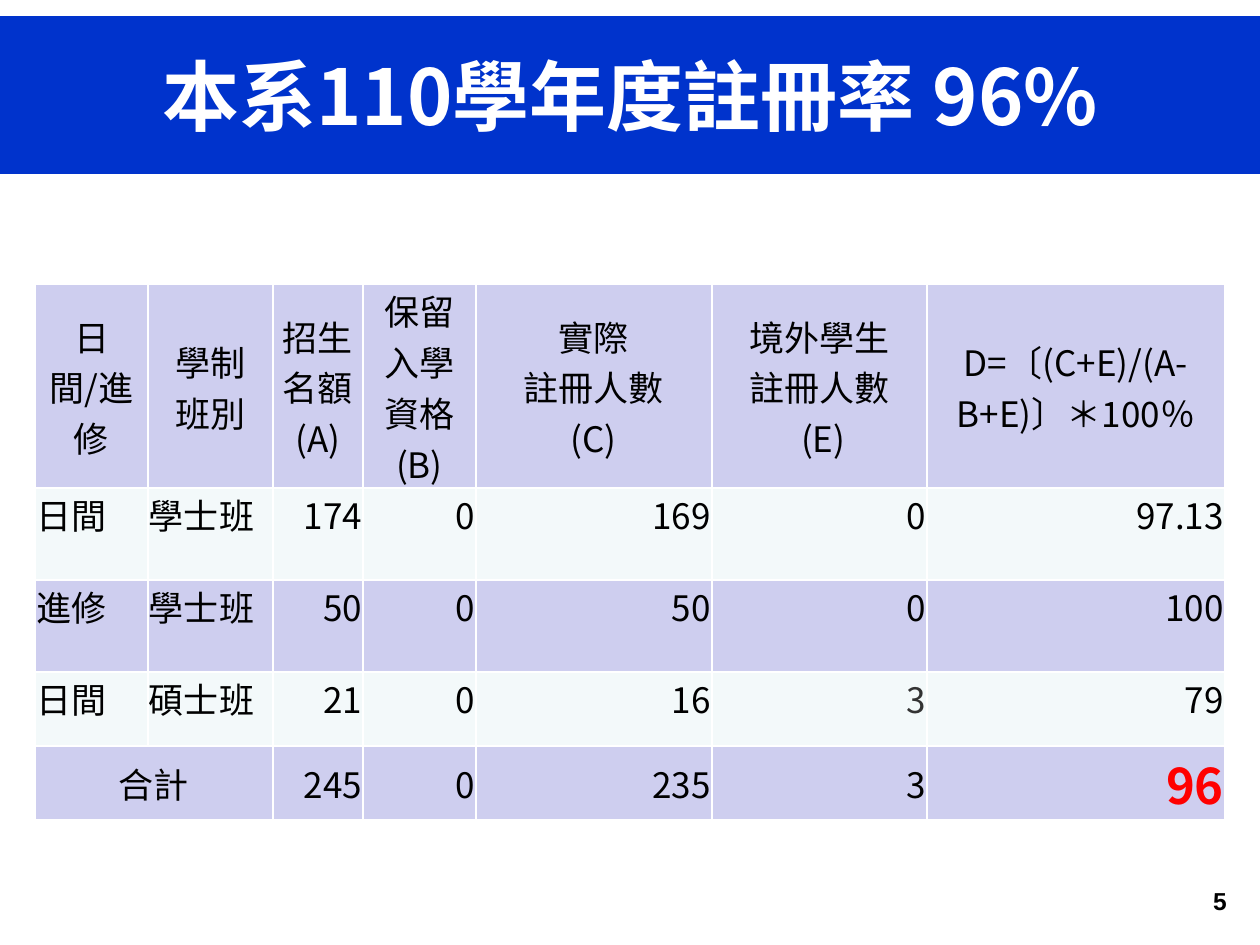
from pptx import Presentation
from pptx.dml.color import RGBColor
from pptx.enum.shapes import MSO_SHAPE as Shape
from pptx.enum.text import MSO_ANCHOR as Anchor, PP_ALIGN as Align
from pptx.oxml.ns import qn
from pptx.util import Emu, Pt
from lxml.etree import SubElement

SCALE = 914400 / 126
COLORS = {
    "blue": "0033CC",
    "white": "FFFFFF",
    "black": "000000",
    "gray": "333333",
    "red": "FF0000",
    "lavender": "CECEEF",
    "mint": "F3F9FA",
}
CJK_FONT = "Noto Sans CJK SC"

COLUMN_WIDTHS = [113, 125, 90, 113, 236, 215, 298]
ROW_HEIGHTS = [204, 92, 92, 74, 74]
ROWS = [
    ["日間/進修", "學制\n班別", "招生名額(A)", "保留\n入學\n資格\n(B)",
     "實際\n註冊人數\n(C)", "境外學生\n註冊人數\n (E)", "D=〔(C+E)/(A-B+E)〕＊100％"],
    ["日間", "學士班", "174", "0", "169", "0", "97.13"],
    ["進修", "學士班", "50", "0", "50", "0", "100"],
    ["日間", "碩士班", "21", "0", "16", "3", "79"],
    ["合計", "", "245", "0", "235", "3", "96"],
]
SPECIAL_STYLES = {
    (3, 5): {"color": "gray"},
    (4, 6): {"size": 28, "color": "red", "bold": True},
}


def px(value):
    return Emu(round(value * SCALE))


def rgb(name):
    return RGBColor.from_string(COLORS[name])


class SlideBuilder:
    def __init__(self, page):
        self.page = page

    def style(self, frame, align, size=20, color="black", bold=False, font=CJK_FONT):
        for para in frame.paragraphs:
            para.alignment = align
            for span in para.runs:
                span.font.size = Pt(size)
                span.font.bold = bold
                span.font.name = font
                span.font.color.rgb = rgb(color)
                SubElement(span.font._element, qn("a:ea"), typeface=font)

    def banner(self, text, left, top, width, height):
        box = self.page.shapes.add_shape(
            Shape.RECTANGLE, px(left), px(top), px(width), px(height))
        box.shadow.inherit = False
        box.fill.solid()
        box.fill.fore_color.rgb = rgb("blue")
        box.line.fill.background()
        box.text_frame.text = text
        box.text_frame.vertical_anchor = Anchor.MIDDLE
        self.style(box.text_frame, Align.CENTER, 44, "white", True)

    def page_number(self, text, left, top, width, height):
        box = self.page.shapes.add_textbox(px(left), px(top), px(width), px(height))
        box.text_frame.word_wrap = True
        box.text_frame.text = text
        self.style(box.text_frame, Align.RIGHT, 14, bold=True, font="Arial")

    def borders(self, cell):
        properties = cell._tc.get_or_add_tcPr()
        for index, side in enumerate(("lnL", "lnR", "lnT", "lnB")):
            line = properties.makeelement(qn(f"a:{side}"), {"w": str(Pt(1))})
            fill = SubElement(line, qn("a:solidFill"))
            SubElement(fill, qn("a:srgbClr"), val=COLORS["white"])
            properties.insert(index, line)

    def cell(self, cell, text, fill, align, anchor, **style):
        cell.fill.solid()
        cell.fill.fore_color.rgb = rgb(fill)
        cell.margin_left = cell.margin_right = cell.margin_top = px(1)
        cell.margin_bottom = 0
        cell.vertical_anchor = anchor
        self.borders(cell)
        if text:
            cell.text_frame.text = text
            self.style(cell.text_frame, align, **style)

    def table(self, rows, left, top, widths, heights):
        grid = self.page.shapes.add_table(
            len(rows), len(widths), px(left), px(top),
            px(sum(widths)), px(sum(heights))).table
        grid.first_row = grid.horz_banding = False
        for column, width in zip(grid.columns, widths):
            column.width = px(width)
        for row, height in zip(grid.rows, heights):
            row.height = px(height)
        last = len(rows) - 1
        grid.cell(last, 0).merge(grid.cell(last, 1))
        for r, texts in enumerate(rows):
            fill = "mint" if r % 2 else "lavender"
            anchor = Anchor.MIDDLE if r in (0, last) else Anchor.TOP
            for c, text in enumerate(texts):
                if r == 0 or (r == last and c == 0):
                    align = Align.CENTER
                else:
                    align = Align.LEFT if c < 2 else Align.RIGHT
                self.cell(grid.cell(r, c), text, fill, align, anchor,
                          **SPECIAL_STYLES.get((r, c), {}))


def main():
    deck = Presentation()
    deck.slide_width, deck.slide_height = px(1260), px(945)
    builder = SlideBuilder(deck.slides.add_slide(deck.slide_layouts[6]))
    builder.banner("本系110學年度註冊率 96%", 0, 16, 1260, 158)
    builder.page_number("5", 945, 880, 294, 65)
    builder.table(ROWS, 35, 284, COLUMN_WIDTHS, ROW_HEIGHTS)
    deck.save("out.pptx")


if __name__ == "__main__":
    main()
